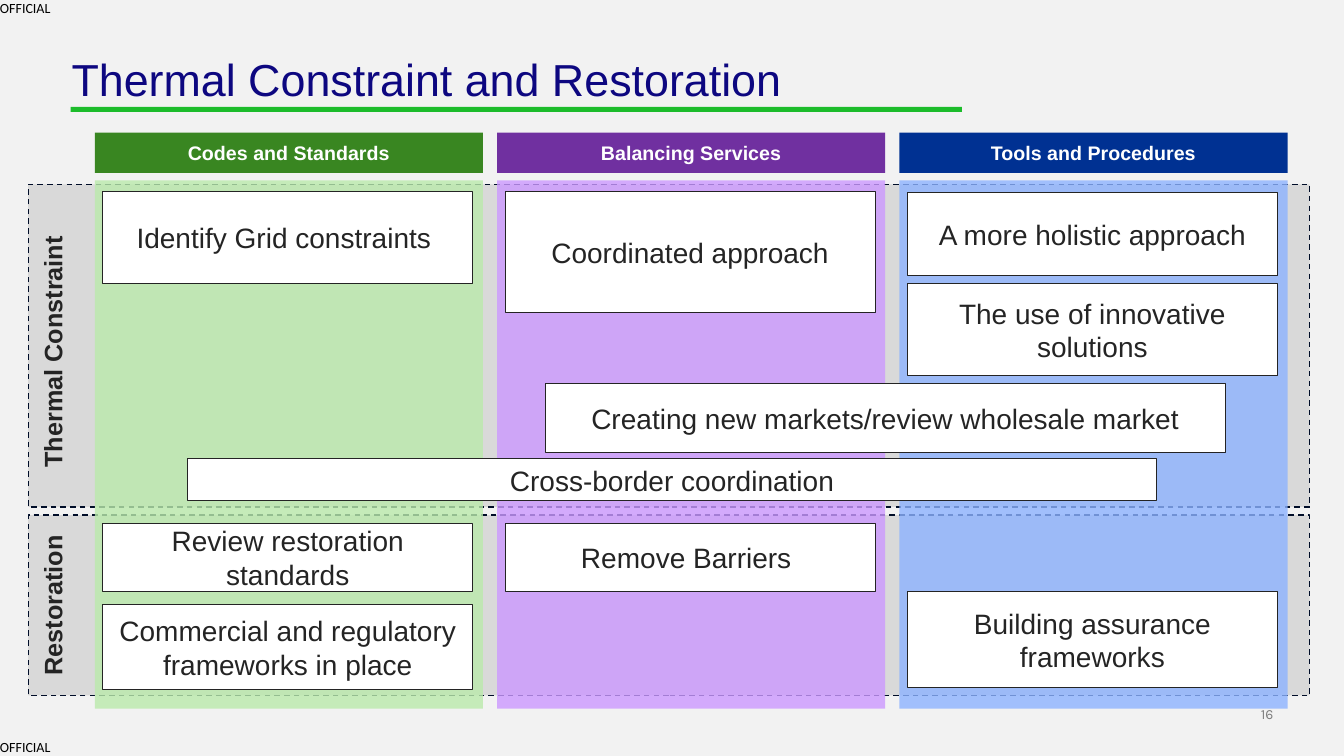
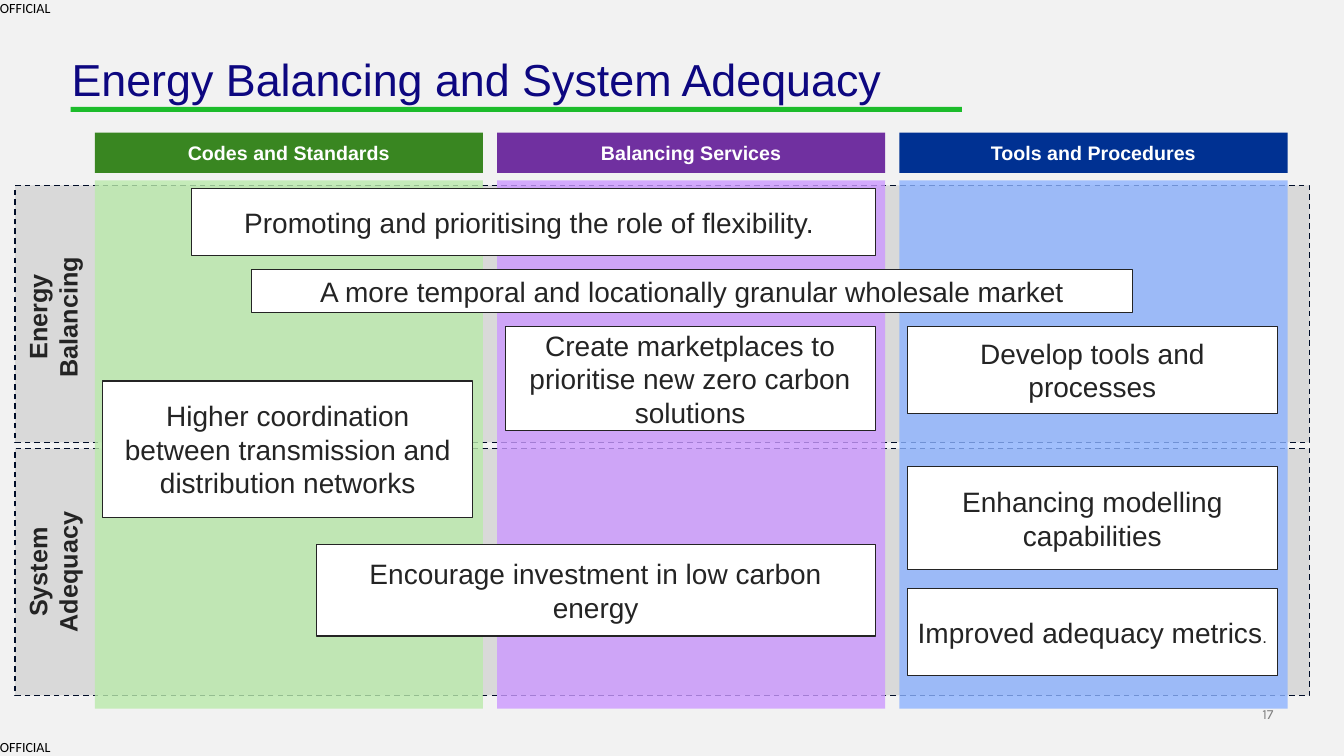
from lxml import etree
from pptx import Presentation, util as u
from pptx.dml.color import RGBColor
from pptx.enum import dml, shapes, text
from pptx.oxml.ns import qn

WIDTH, HEIGHT = 13.33, 7.5
ROW = HEIGHT / 15
COLUMN_LEFT, COLUMN_STEP, COLUMN_WIDTH = 0.94, 3.99, 3.85
BAND_RIGHT, LABEL_CENTRE, LABEL_DEPTH = 12.99, 0.52, 0.73
SINGLE = 0.92
INK, WHITE, GREY = "242424", "FFFFFF", "D9D9D9"
COLUMNS = [
    ("Codes and Standards", "398621", "BAEAAB"),
    ("Balancing Services", "7030A0", "CC99FF"),
    ("Tools and Procedures", "003192", "8DB3FF"),
]

# Bands: label, top row, rows, label centre row, label length in rows.
# Cards: start column, top row, columns spanned, rows, words, small ending.
SLIDES = [
    {
        "title": "Thermal Constraint and Restoration",
        "number": "16",
        "band_left": 0.28,
        "bands": [
            ("Restoration", 10.22, 3.58, 12.01, 4),
            ("Thermal Constraint", 3.66, 6.4, 6.98, 5.12),
        ],
        "cards": [
            (0.02, 3.8, SINGLE, 1.82, "Identify Grid constraints "),
            (2.02, 3.82, SINGLE, 1.64, "A more holistic approach"),
            (1.02, 3.8, SINGLE, 2.4, "Coordinated approach"),
            (2.02, 5.62, SINGLE, 1.84, "The use of innovative solutions"),
            (0.23, 9.1, 2.41, 0.84, "Cross-border coordination"),
            (1.02, 10.38, SINGLE, 1.36, "Remove Barriers "),
            (0.02, 10.38, SINGLE, 1.36, "Review restoration standards"),
            (2.02, 11.74, SINGLE, 1.9, "Building assurance frameworks"),
            (0.02, 12, SINGLE, 1.68, "Commercial and regulatory frameworks in place"),
            (1.12, 7.6, 1.69, 1.38, "Creating new markets/review wholesale market"),
        ],
    },
    {
        "title": "Energy Balancing and System Adequacy",
        "number": "17",
        "band_left": 0.15,
        "bands": [
            ("System Adequacy", 8.9, 4.9, 11.35, 4.16),
            ("Energy Balancing", 3.68, 5.1, 6.29, 4.48),
        ],
        "cards": [
            (1.02, 6.48, SINGLE, 2.06,
             "Create marketplaces to prioritise new zero carbon solutions"),
            (0.39, 5.34, 2.19, 0.86,
             "A more temporal and locationally granular wholesale market"),
            (0.24, 3.74, 1.7, 1.34,
             "Promoting and prioritising the role of flexibility. "),
            (2.02, 6.48, SINGLE, 1.72, "Develop tools and processes"),
            (0.02, 7.56, SINGLE, 2.7,
             "Higher coordination between transmission and distribution networks"),
            (0.55, 10.8, 1.39, 1.82, "Encourage investment in low carbon energy"),
            (2.02, 9.26, SINGLE, 2.04, "Enhancing modelling capabilities"),
            (2.02, 11.68, SINGLE, 1.72, "Improved adequacy metrics", "."),
        ],
    },
]


def colour(value):
    """Turn a hex string into a colour."""
    return RGBColor.from_string(value)


def column_left(column):
    """Give the left edge of a column position in inches."""
    return COLUMN_LEFT + column * COLUMN_STEP


def format_run(run, size, ink, bold=False, font="Arial"):
    """Set the typeface, size, weight and colour of a run."""
    run.font.name, run.font.size, run.font.bold = font, u.Pt(size), bold
    run.font.color.rgb = colour(ink)


def write(shape, words, size, ink, bold=False, font="Arial",
          align=text.PP_ALIGN.CENTER, anchor=text.MSO_ANCHOR.MIDDLE):
    """Put one formatted paragraph in a shape and return it."""
    frame = shape.text_frame
    frame.word_wrap = True
    frame.vertical_anchor = anchor
    paragraph = frame.paragraphs[0]
    paragraph.text = words
    paragraph.alignment = align
    format_run(paragraph.runs[0], size, ink, bold, font)
    return paragraph


def add_rectangle(slide, left, top, width, height, fill, line=None, weight=0.75):
    """Draw a flat rectangle, placed in inches across and rows down."""
    shape = slide.shapes.add_shape(
        shapes.MSO_SHAPE.RECTANGLE, u.Inches(left), u.Inches(top * ROW),
        u.Inches(width), u.Inches(height * ROW))
    shape.shadow.inherit = False
    shape.fill.solid()
    shape.fill.fore_color.rgb = colour(fill)
    if line:
        shape.line.color.rgb = colour(line)
        shape.line.width = u.Pt(weight)
    else:
        shape.line.fill.background()
    return shape


def add_plain_text(slide, left, top, width, height, words, size, ink, font,
                   align=text.PP_ALIGN.LEFT, anchor=text.MSO_ANCHOR.TOP):
    """Add a text box without margins and return its paragraph."""
    box = slide.shapes.add_textbox(
        u.Inches(left), u.Inches(top * ROW), u.Inches(width), u.Inches(height * ROW))
    frame = box.text_frame
    frame.margin_left = frame.margin_right = frame.margin_top = frame.margin_bottom = 0
    return write(box, words, size, ink, font=font, align=align, anchor=anchor)


def add_frame(slide, title, number):
    """Add the title, its underline, the markings and the page number."""
    add_plain_text(slide, 12.21, 14, 0.42, 0.34, number, 10, "7F7F7F", "Karla",
                   text.PP_ALIGN.RIGHT, text.MSO_ANCHOR.BOTTOM)
    for top in (0, 14.66):
        add_plain_text(slide, 0, top, 0.6, 0.34, "OFFICIAL", 10, "000000", "Calibri")
    add_rectangle(slide, 0.7, 2.12, 8.84, 0.1, "1CBC2B")
    heading = add_plain_text(slide, 0.71, 1.14, 8.86, 0.96, title, 32, "0D0780", "Arial")
    heading.line_spacing = 0.9


def add_band(slide, left, label, top, height, centre, length):
    """Add a dashed band with its upward label."""
    band = add_rectangle(slide, left, top, BAND_RIGHT - left, height, GREY, "000D28", 1)
    band.line.dash_style = dml.MSO_LINE.DASH
    box = slide.shapes.add_textbox(
        u.Inches(LABEL_CENTRE - length * ROW / 2),
        u.Inches(centre * ROW - LABEL_DEPTH / 2),
        u.Inches(length * ROW), u.Inches(LABEL_DEPTH))
    box.rotation = 270
    write(box, label, 18, INK, bold=True)


def add_column(slide, index, name, strong, pale):
    """Add a column heading above its translucent body."""
    left = column_left(index)
    heading = add_rectangle(slide, left, 2.63, COLUMN_WIDTH, 0.8, strong)
    write(heading, name, 14, WHITE, bold=True)
    body = add_rectangle(slide, left, 3.58, COLUMN_WIDTH, 10.48, pale)
    tint = body.element.spPr.find(".//" + qn("a:srgbClr"))
    etree.SubElement(tint, qn("a:alpha"), val="80000")


def add_card(slide, column, top, span, height, words, ending=""):
    """Add a white card that may span several columns."""
    card = add_rectangle(slide, column_left(column), top, span * COLUMN_STEP, height,
                         WHITE, INK)
    paragraph = write(card, words, 20, INK)
    if ending:
        run = paragraph.add_run()
        run.text = ending
        format_run(run, 12, INK)


def main():
    """Build and save the presentation."""
    presentation = Presentation()
    presentation.slide_width = u.Inches(WIDTH)
    presentation.slide_height = u.Inches(HEIGHT)
    background = presentation.slide_master.background.fill
    background.solid()
    background.fore_color.rgb = colour("F2F2F2")
    for content in SLIDES:
        slide = presentation.slides.add_slide(presentation.slide_layouts[6])
        add_frame(slide, content["title"], content["number"])
        for band in content["bands"]:
            add_band(slide, content["band_left"], *band)
        for index, column in enumerate(COLUMNS):
            add_column(slide, index, *column)
        for card in content["cards"]:
            add_card(slide, *card)
    presentation.save("out.pptx")


if __name__ == "__main__":
    main()
